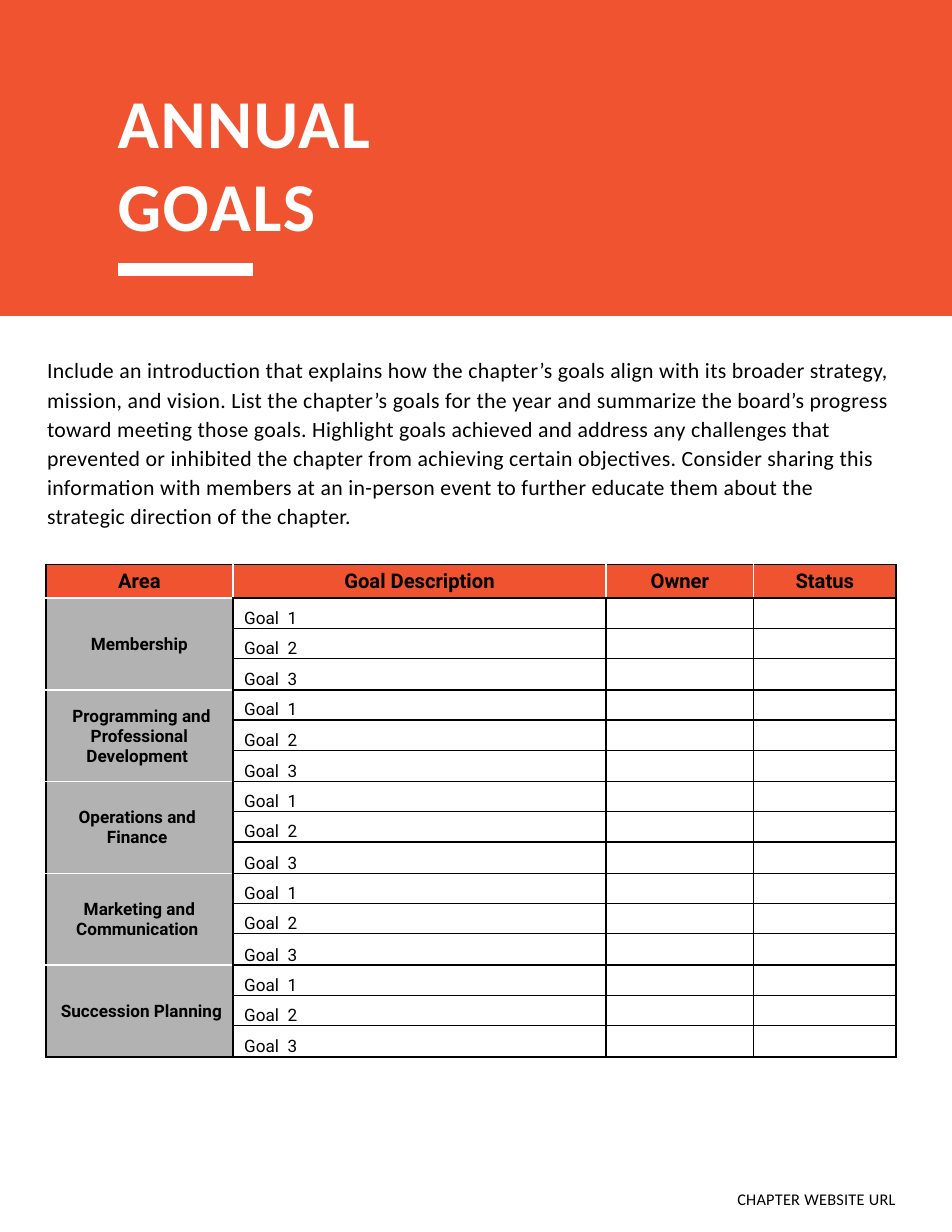
from lxml.etree import SubElement
from pptx import Presentation
from pptx.dml.color import RGBColor
from pptx.enum.text import MSO_ANCHOR, PP_ALIGN
from pptx.oxml.ns import qn
from pptx.util import Inches, Pt

ORANGE, GRAY, WHITE, BLACK = "F0532F", "B3B2B3", "FFFFFF", "000000"
INTRO = (
    "Include an introduction that explains how the chapter’s goals align with its "
    "broader strategy, mission, and vision. List the chapter’s goals for the year and "
    "summarize the board’s progress toward meeting those goals. Highlight goals achieved "
    "and address any challenges that prevented or inhibited the chapter from achieving "
    "certain objectives. Consider sharing this information with members at an in-person "
    "event to further educate them about the strategic direction of the chapter."
)
HEADINGS = ["Area", "Goal Description", "Owner", "Status"]
AREAS = [
    " Membership ",
    " Programming and Professional Development ",
    "Operations and \nFinance ",
    "Marketing and Communication ",
    " Succession Planning",
]
GOALS = ["Goal  1", "Goal  2", "Goal  3"]
COLUMN_WIDTHS = [1.67, 3.33, 1.32, 1.27]
HEADING_HEIGHT = 0.3
GOAL_HEIGHTS = [0.27, 0.27, 0.28]


def paint(color_format, color):
    """Set a solid fill or a font to a hex colour."""
    if hasattr(color_format, "solid"):
        color_format.solid()
        color_format.fore_color.rgb = RGBColor.from_string(color)
    else:
        color_format.color.rgb = RGBColor.from_string(color)


def write(frame, text, size, font="Calibri", color=BLACK, bold=False,
          align=PP_ALIGN.LEFT, leading=None, tracking=0):
    """Fill a text frame with one formatted paragraph per line of text."""
    for index, line in enumerate(text.split("\n")):
        paragraph = frame.add_paragraph() if index else frame.paragraphs[0]
        paragraph.alignment = align
        if leading:
            paragraph.line_spacing = Pt(leading)
        if not line:
            SubElement(paragraph._p, qn("a:endParaRPr"), sz=str(int(size * 100)))
            continue
        run = paragraph.add_run()
        run.text = line
        run.font.name, run.font.size, run.font.bold = font, Pt(size), bold
        paint(run.font, color)
        if tracking:
            run._r.get_or_add_rPr().set("spc", str(int(tracking * 100)))


def add_text(slide, left, top, width, height, text, **style):
    """Add a wrapping text box without insets."""
    frame = slide.shapes.add_textbox(
        Inches(left), Inches(top), Inches(width), Inches(height)).text_frame
    frame.word_wrap = True
    frame.margin_left = frame.margin_right = frame.margin_top = frame.margin_bottom = 0
    write(frame, text, **style)


def add_block(slide, left, top, width, height, color):
    """Add a plain filled rectangle as a freeform."""
    right, bottom = left + width, top + height
    builder = slide.shapes.build_freeform(Inches(left), Inches(top))
    builder.add_line_segments([(Inches(x), Inches(y)) for x, y in
                               [(right, top), (right, bottom), (left, bottom)]])
    block = builder.convert_to_shape()
    block.shadow.inherit = False
    paint(block.fill, color)
    block.line.fill.background()


def style_cell(cell, text="", size=11, bold=False, align=PP_ALIGN.LEFT,
               anchor=MSO_ANCHOR.BOTTOM, side_inset=0.1, fill=None, white_sides=""):
    """Write a table cell and draw its borders, black unless listed as white."""
    cell.margin_left = cell.margin_right = Inches(side_inset)
    cell.margin_top, cell.margin_bottom = Inches(0.01), 0
    cell.vertical_anchor = anchor
    write(cell.text_frame, text, size, font="Roboto", bold=bold, align=align)
    properties = cell._tc.get_or_add_tcPr()
    for side in "LRTB":
        border = SubElement(properties, qn(f"a:ln{side}"), w=str(Pt(1)))
        solid = SubElement(border, qn("a:solidFill"))
        SubElement(solid, qn("a:srgbClr"), val=WHITE if side in white_sides else BLACK)
    if fill:
        paint(cell.fill, fill)
    else:
        cell.fill.background()


def add_goal_table(slide, left, top):
    """Add the table of three goals for each area."""
    heights = [HEADING_HEIGHT] + GOAL_HEIGHTS * len(AREAS)
    table = slide.shapes.add_table(
        len(heights), len(COLUMN_WIDTHS), Inches(left), Inches(top),
        Inches(sum(COLUMN_WIDTHS)), Inches(sum(heights))).table
    table.first_row = table.horz_banding = False
    for column, width in zip(table.columns, COLUMN_WIDTHS):
        column.width = Inches(width)
    for row, height in zip(table.rows, heights):
        row.height = Inches(height)

    label = dict(bold=True, align=PP_ALIGN.CENTER, anchor=MSO_ANCHOR.MIDDLE, side_inset=0.01)
    for column, (heading, white_sides) in enumerate(zip(HEADINGS, ["RB", "LR", "LR", "L"])):
        style_cell(table.cell(0, column), heading, size=13, fill=ORANGE,
                   white_sides=white_sides, **label)

    for index, area in enumerate(AREAS):
        first = 1 + index * len(GOALS)
        white_sides = "T" if area == AREAS[-1] else "TB"
        for offset, goal in enumerate(GOALS):
            row = first + offset
            style_cell(table.cell(row, 0), "" if offset else area, fill=GRAY,
                       white_sides=white_sides, **label)
            style_cell(table.cell(row, 1), goal)
            for column in (2, 3):
                style_cell(table.cell(row, column))
        table.cell(first, 0).merge(table.cell(first + len(GOALS) - 1, 0))


def main():
    """Build the annual goals page."""
    presentation = Presentation()
    presentation.slide_width, presentation.slide_height = Inches(8.5), Inches(11)
    slide = presentation.slides.add_slide(presentation.slide_layouts[6])
    add_block(slide, 0, 0, 8.5, 2.82, ORANGE)
    add_text(slide, 1.05, 0.71, 7.07, 1.49, "ANNUAL\nGOALS", size=44, color=WHITE,
             bold=True, leading=53.3, tracking=1)
    add_block(slide, 1.05, 2.35, 1.21, 0.11, WHITE)
    add_text(slide, 0.42, 3.16, 7.58, 1.58, INTRO, size=14, leading=18.8, tracking=0.2)
    add_goal_table(slide, 0.41, 5.04)
    add_text(slide, 4.9, 10.58, 3.1, 0.2, "CHAPTER WEBSITE URL", size=10.5,
             align=PP_ALIGN.RIGHT, leading=15.3, tracking=0.2)
    presentation.save("out.pptx")


if __name__ == "__main__":
    main()
